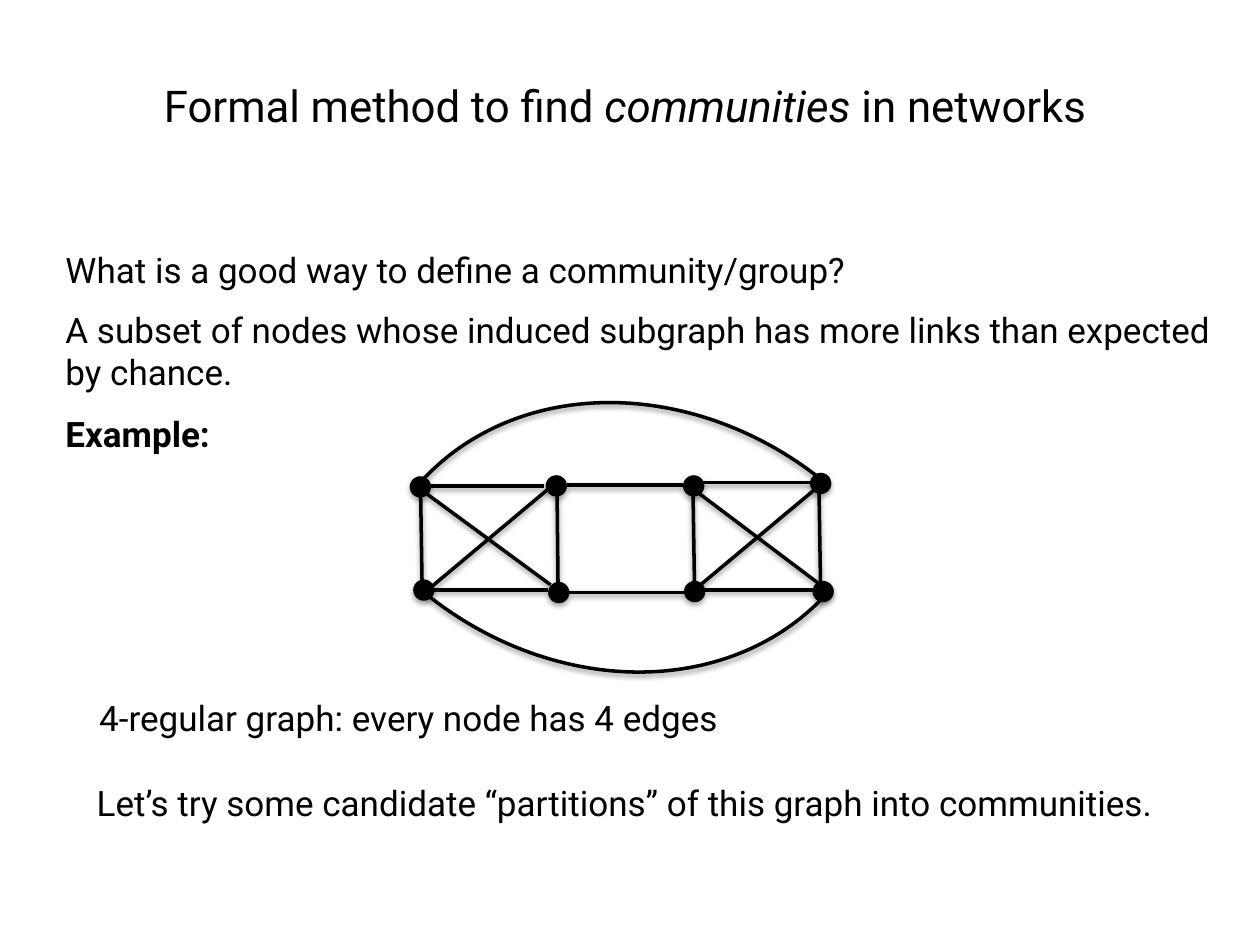
from dataclasses import dataclass

from lxml import etree
from pptx import Presentation
from pptx.dml.color import RGBColor
from pptx.enum.shapes import MSO_CONNECTOR, MSO_SHAPE
from pptx.enum.text import MSO_ANCHOR, MSO_AUTO_SIZE, PP_ALIGN
from pptx.oxml.ns import qn
from pptx.util import Cm, Pt

STRAIGHT = MSO_CONNECTOR.STRAIGHT
OVAL, ARC = MSO_SHAPE.OVAL, MSO_SHAPE.ARC
TOP, LEFT = MSO_ANCHOR.TOP, PP_ALIGN.LEFT
GROW = MSO_AUTO_SIZE.SHAPE_TO_FIT_TEXT


@dataclass(frozen=True)
class Theme:
    font: str = "Roboto"
    ink: RGBColor = RGBColor(0, 0, 0)
    title: Pt = Pt(25)
    body: Pt = Pt(20)
    line: Pt = Pt(2)


THEME = Theme()


def add_shadow(shape, alpha, dist):
    """Soft shadow straight down; alpha in percent, dist in points."""
    effects = etree.SubElement(shape._element.spPr, qn("a:effectLst"))
    shadow = etree.SubElement(
        effects, qn("a:outerShdw"), blurRad=str(Pt(3.1)), dist=str(Pt(dist)),
        dir="5400000", rotWithShape="0")
    color = etree.SubElement(shadow, qn("a:srgbClr"), val=str(THEME.ink))
    etree.SubElement(color, qn("a:alpha"), val=str(alpha * 1000))


def format_text(tf, size, wrap=True, bold=False):
    tf.word_wrap = wrap
    tf.auto_size = GROW
    tf.vertical_anchor = TOP
    for p in tf.paragraphs:
        p.alignment = LEFT
        for r in p.runs:
            r.font.name = THEME.font
            r.font.size = size
            r.font.bold = bold
            r.font.color.rgb = THEME.ink


prs = Presentation()
prs.slide_width, prs.slide_height = Cm(25.4), Cm(19.05)
s = prs.slides.add_slide(prs.slide_layouts[5])

# Title
title = s.shapes.title
title.left, title.top, title.width, title.height = Cm(3.05), Cm(1.47), Cm(19.18), Cm(1.32)
p = title.text_frame.paragraphs[0]
for text, italic in (("Formal method to find ", False),
                     ("communities", True),
                     (" in networks", False)):
    r = p.add_run()
    r.text = text
    r.font.italic = italic
format_text(title.text_frame, THEME.title, wrap=False)

# Statements: text, left, top, width, height, wrap, bold
STATEMENTS = [
    ("What is a good way to define a community/group?", 1.07, 4.88, 23.93, 1.12, True, False),
    ("A subset of nodes whose induced subgraph has more links than expected by chance.",
     1.07, 6.1, 23.93, 1.96, True, False),
    ("Example:", 1.07, 8.2, 3.68, 1.12, False, True),
    ("4-regular graph: every node has 4 edges", 1.75, 13.92, 23.93, 1.12, True, False),
    ("Let’s try some candidate “partitions” of this graph into communities.",
     1.7, 15.62, 23.93, 1.12, True, False),
]
for text, x, y, w, h, wrap, bold in STATEMENTS:
    tf = s.shapes.add_textbox(Cm(x), Cm(y), Cm(w), Cm(h)).text_frame
    tf.text = text
    format_text(tf, THEME.body, wrap, bold)

# Graph: eight nodes in two rows, joined by straight edges
NODE_SIZE = 0.43
NODES = [
    (8.26, 9.6), (11, 9.58), (13.77, 9.58), (16.33, 9.53),
    (8.33, 11.68), (11.05, 11.73), (13.79, 11.71), (16.38, 11.71),
]
EDGES = [
    # top row
    (8.64, 9.8, 10.97, 9.8), (11.43, 9.78, 13.77, 9.78), (14.15, 9.73, 16.48, 9.73),
    # bottom row
    (8.71, 11.89, 11.05, 11.89), (11.46, 11.94, 13.79, 11.94), (14.22, 11.89, 16.54, 11.89),
    # uprights
    (8.48, 9.98, 8.51, 11.86), (11.23, 9.96, 11.25, 11.84),
    (13.97, 9.93, 14, 11.79), (16.51, 9.88, 16.54, 11.73),
    # diagonals
    (16.41, 9.88, 14, 11.89), (11.05, 9.86, 8.66, 11.86),
    (11.1, 11.79, 8.61, 9.96), (16.54, 11.79, 14.07, 9.93),
]
graph = s.shapes.add_group_shape()
for x, y in NODES:
    node = graph.shapes.add_shape(OVAL, Cm(x), Cm(y), Cm(NODE_SIZE), Cm(NODE_SIZE))
    node.rotation = 359
    node.fill.solid()
    node.fill.fore_color.rgb = THEME.ink
    node.line.fill.background()
    add_shadow(node, 35, 1.8)
for ends in EDGES:
    edge = graph.shapes.add_connector(STRAIGHT, *map(Cm, ends))
    edge.line.color.rgb = THEME.ink
    edge.line.width = THEME.line
    add_shadow(edge, 38, 1.6)

# Curved edges between the outer nodes, below and above
for x, y, turn in ((6.55, 1.42, 129.8), (7.85, 7.57, 309.6)):
    arc = s.shapes.add_shape(ARC, Cm(x), Cm(y), Cm(10.77), Cm(12.67))
    arc.rotation = turn
    arc.adjustments[0] = 162.61
    arc.adjustments[1] = 0
    arc.fill.background()
    arc.line.color.rgb = THEME.ink
    arc.line.width = THEME.line
    add_shadow(arc, 38, 1.6)

prs.save("out.pptx")
